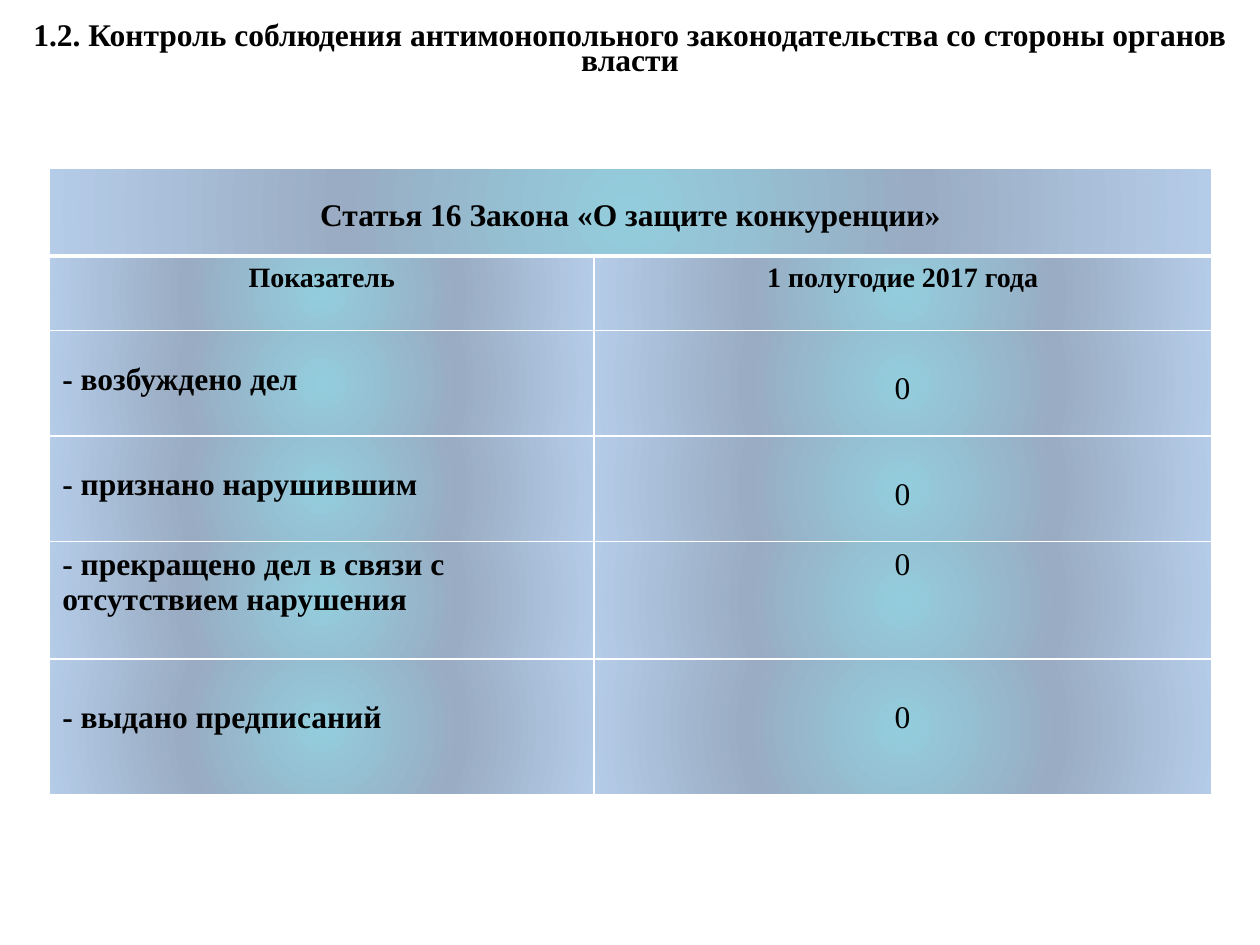
from dataclasses import dataclass

from pptx import Presentation
from pptx.dml.color import RGBColor
from pptx.enum.text import MSO_ANCHOR, MSO_AUTO_SIZE, PP_ALIGN
from pptx.oxml import parse_xml
from pptx.oxml.ns import nsdecls
from pptx.slide import Slide
from pptx.table import Table, _Cell
from pptx.text.text import TextFrame
from pptx.util import Pt


@dataclass(frozen=True)
class Theme:
    font: str = "Times New Roman"
    ink: str = "000000"
    border: str = "FFFFFF"
    gradient: tuple[str, ...] = ("93CDDD", "99ACC3", "B5CCE8")
    body_size: float = 18
    header_size: float = 16
    tight: float = 0.66
    thin: float = 1
    thick: float = 3


@dataclass(frozen=True)
class Row:
    height: float
    label: str
    value: str = ""
    label_top: float = 3.6
    value_top: float = 3.6


THEME = Theme()
TITLE = "1.2. Контроль соблюдения антимонопольного законодательства со стороны органов власти"
COLUMN_WIDTHS = (311, 352.8)
ROWS = (
    Row(50.3, "Статья 16 Закона «О защите конкуренции»", label_top=17.2),
    Row(42.5, "Показатель", "1 полугодие 2017 года"),
    Row(60.3, "- возбуждено дел", "0", 18, 23.7),
    Row(60.3, "- признано нарушившим", "0", 18, 23.7),
    Row(67.2, "- прекращено дел в связи с отсутствием нарушения", "0"),
    Row(77.7, "- выдано предписаний", "0", 23.4, 23.4),
)


def write_text(frame: TextFrame, text: str, *, size: float = THEME.body_size,
               bold: bool = True, align: PP_ALIGN = PP_ALIGN.CENTER,
               spacing: float = 1.0) -> None:
    """Fill a text frame with one formatted paragraph."""
    para = frame.paragraphs[0]
    para.alignment = align
    para.line_spacing = spacing
    span = para.add_run()
    span.text = text
    span.font.name = THEME.font
    span.font.size = Pt(size)
    span.font.bold = bold
    span.font.color.rgb = RGBColor.from_string(THEME.ink)


def paint_cell(cell: _Cell, *, top: float, bottom: float) -> None:
    """Give a cell white borders and a radial gradient."""
    properties = cell._tc.get_or_add_tcPr()
    widths = {"lnL": THEME.thin, "lnR": THEME.thin, "lnT": top, "lnB": bottom}
    for side, width in widths.items():
        properties.append(parse_xml(
            f'<a:{side} {nsdecls("a")} w="{Pt(width)}"><a:solidFill>'
            f'<a:srgbClr val="{THEME.border}"/></a:solidFill></a:{side}>'))
    stops = "".join(
        f'<a:gs pos="{index * 50000}"><a:srgbClr val="{color}"/></a:gs>'
        for index, color in enumerate(THEME.gradient))
    properties.append(parse_xml(
        f'<a:gradFill {nsdecls("a")} rotWithShape="1"><a:gsLst>{stops}</a:gsLst>'
        '<a:path path="circle"><a:fillToRect l="50000" t="50000" r="50000" b="50000"/>'
        '</a:path></a:gradFill>'))


def add_title(slide: Slide) -> None:
    """Place the heading across the top of the slide."""
    box = slide.shapes.title
    box.left, box.top, box.width, box.height = Pt(0), Pt(11.5), Pt(720), Pt(36)
    frame = box.text_frame
    frame.word_wrap = True
    frame.auto_size = MSO_AUTO_SIZE.SHAPE_TO_FIT_TEXT
    frame.vertical_anchor = MSO_ANCHOR.TOP
    write_text(frame, TITLE, spacing=THEME.tight)


def fill_row(table: Table, index: int, row: Row) -> None:
    """Write and paint the two cells of one table row."""
    table.rows[index].height = Pt(row.height)
    header = index < 2
    for column, (text, top) in enumerate(
            ((row.label, row.label_top), (row.value, row.value_top))):
        cell = table.cell(index, column)
        cell.margin_top = Pt(top)
        cell.vertical_anchor = MSO_ANCHOR.TOP
        paint_cell(cell, top=THEME.thick if index == 1 else THEME.thin,
                   bottom=THEME.thick if index == 0 else THEME.thin)
        if text:
            write_text(cell.text_frame, text,
                       size=THEME.header_size if index == 1 else THEME.body_size,
                       bold=header or column == 0,
                       align=PP_ALIGN.CENTER if header or column else PP_ALIGN.LEFT)


def add_case_table(slide: Slide) -> None:
    """Build the table of antitrust case counts."""
    height = sum(row.height for row in ROWS)
    table = slide.shapes.add_table(
        len(ROWS), len(COLUMN_WIDTHS), Pt(28.4), Pt(96),
        Pt(sum(COLUMN_WIDTHS)), Pt(height)).table
    table.horz_banding = False
    table.first_row = False
    for column, width in zip(table.columns, COLUMN_WIDTHS):
        column.width = Pt(width)
    table.cell(0, 0).merge(table.cell(0, 1))
    for index, row in enumerate(ROWS):
        fill_row(table, index, row)


def main() -> None:
    """Create and save the deck."""
    deck = Presentation()
    deck.slide_width, deck.slide_height = Pt(720), Pt(540)
    slide = deck.slides.add_slide(deck.slide_layouts[5])
    add_title(slide)
    add_case_table(slide)
    deck.save("out.pptx")


if __name__ == "__main__":
    main()
